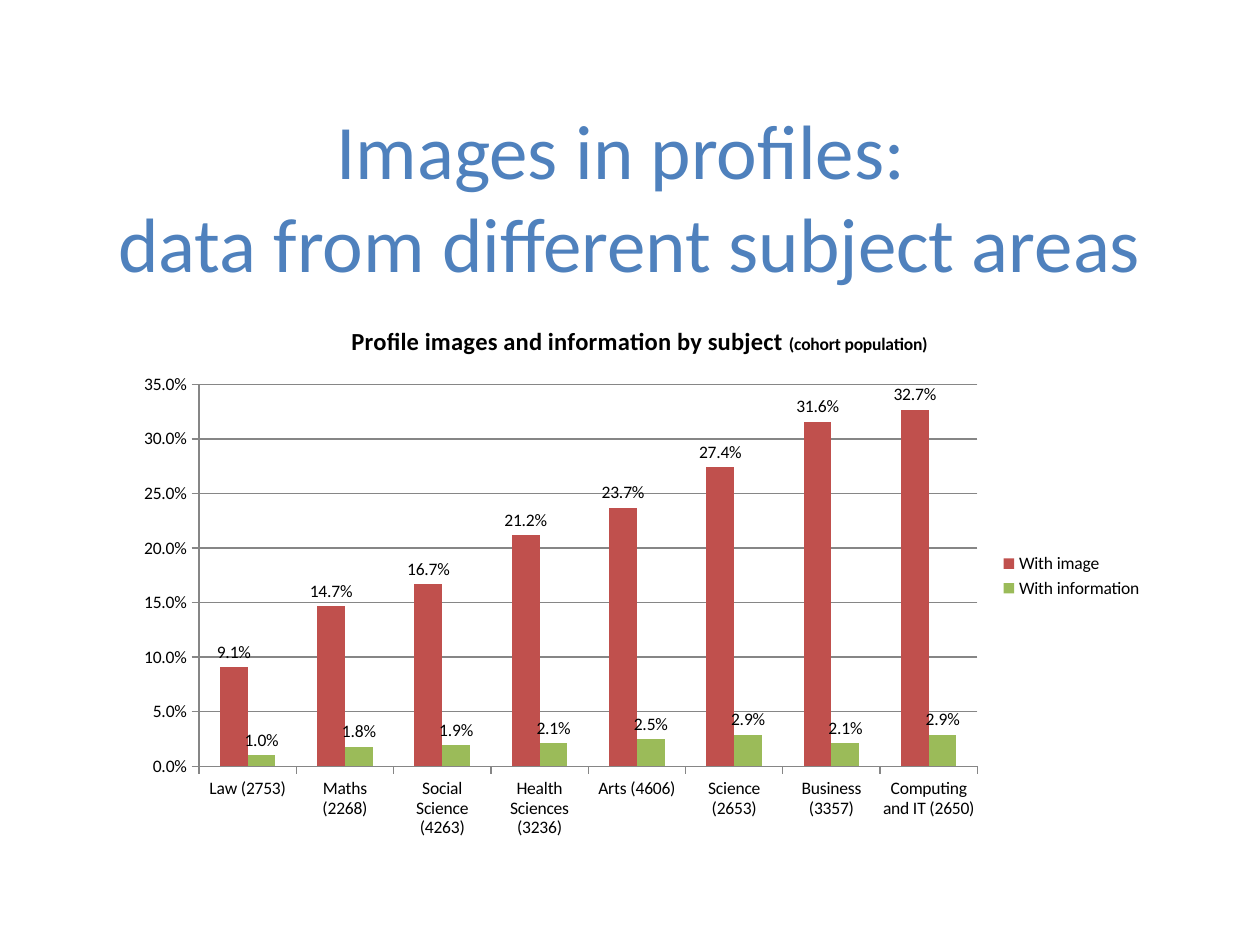
"""Build a slide that charts profile images and information by subject area."""
from pptx import Presentation
from pptx.chart.data import CategoryChartData
from pptx.dml.color import RGBColor
from pptx.enum.chart import XL_CHART_TYPE as ChartType
from pptx.enum.chart import XL_LABEL_POSITION as LabelPosition
from pptx.enum.chart import XL_LEGEND_POSITION as LegendPosition
from pptx.enum.chart import XL_TICK_MARK as TickMark
from pptx.enum.text import MSO_ANCHOR as Anchor
from pptx.enum.text import PP_ALIGN as Align
from pptx.util import Inches, Pt

HEADING = ["Images in profiles:", " data from different subject areas"]
CHART_TITLE = "Profile images and information by subject "
CHART_TITLE_NOTE = "(cohort population)"
SUBJECTS = [
    ("Law (2753)", 0.091, 0.01),
    ("Maths (2268)", 0.147, 0.018),
    ("Social Science (4263)", 0.167, 0.019),
    ("Health Sciences (3236)", 0.212, 0.021),
    ("Arts (4606)", 0.237, 0.025),
    ("Science (2653)", 0.274, 0.029),
    ("Business (3357)", 0.316, 0.021),
    ("Computing and IT (2650)", 0.327, 0.029),
]
SERIES = ["With image", "With information"]
PERCENT = "0.0%"

THEME = {
    "font": "Calibri",
    "heading": "4F81BD",
    "text": "000000",
    "line": "868686",
    "series": ["C0504D", "9BBB59"],
    "heading_size": 44,
    "title_size": 14,
    "body_size": 10,
}
WIDTH, HEIGHT = Inches(10), Inches(7.5)
HEADING_AREA = (0.043, 0.123, 0.9, 0.167)
CHART_AREA = (0.098, 0.321, 0.819, 0.577)


def place(area):
    left, top, width, height = area
    return (int(left * WIDTH), int(top * HEIGHT),
            int(width * WIDTH), int(height * HEIGHT))


def set_font(font, size, color, bold=False):
    font.name = THEME["font"]
    font.size = Pt(size)
    font.bold = bold
    font.color.rgb = RGBColor.from_string(color)


def write_text(paragraph, text, **font_format):
    run = paragraph.add_run()
    run.text = text
    set_font(run.font, **font_format)


def add_heading(slide):
    frame = slide.shapes.add_textbox(*place(HEADING_AREA)).text_frame
    frame.word_wrap = True
    frame.vertical_anchor = Anchor.MIDDLE
    paragraph = frame.paragraphs[0]
    paragraph.alignment = Align.CENTER
    for index, line in enumerate(HEADING):
        if index:
            paragraph.add_line_break()
        write_text(paragraph, line, size=THEME["heading_size"], color=THEME["heading"])


def style_line(line):
    line.color.rgb = RGBColor.from_string(THEME["line"])
    line.width = Pt(0.75)


def add_subject_chart(slide):
    names, *columns = zip(*SUBJECTS)
    data = CategoryChartData(number_format=PERCENT)
    data.categories = names
    for name, values in zip(SERIES, columns):
        data.add_series(name, values)
    chart = slide.shapes.add_chart(
        ChartType.COLUMN_CLUSTERED, *place(CHART_AREA), data).chart
    set_font(chart.font, THEME["body_size"], THEME["text"])

    title = chart.chart_title.text_frame.paragraphs[0]
    for text, size in [(CHART_TITLE, "title_size"), (CHART_TITLE_NOTE, "body_size")]:
        write_text(title, text, size=THEME[size], color=THEME["text"], bold=True)
    chart.chart_title.include_in_layout = False

    chart.has_legend = True
    chart.legend.position = LegendPosition.RIGHT
    chart.legend.include_in_layout = False

    for axis in (chart.category_axis, chart.value_axis):
        axis.major_tick_mark = TickMark.OUTSIDE
        axis.minor_tick_mark = TickMark.NONE
        style_line(axis.format.line)
    value_axis = chart.value_axis
    value_axis.minimum_scale, value_axis.maximum_scale = 0, 0.35
    value_axis.major_unit = 0.05
    value_axis.tick_labels.number_format = PERCENT
    value_axis.tick_labels.number_format_is_linked = False
    style_line(value_axis.major_gridlines.format.line)

    plot = chart.plots[0]
    plot.vary_by_categories = False
    plot.gap_width, plot.overlap = 150, 0
    for series, color in zip(plot.series, THEME["series"]):
        series.format.fill.solid()
        series.format.fill.fore_color.rgb = RGBColor.from_string(color)
        labels = series.data_labels
        labels.show_value = True
        labels.number_format = PERCENT
        labels.number_format_is_linked = False
        labels.position = LabelPosition.OUTSIDE_END


def main():
    presentation = Presentation()
    presentation.slide_width, presentation.slide_height = WIDTH, HEIGHT
    slide = presentation.slides.add_slide(presentation.slide_layouts[6])
    add_heading(slide)
    add_subject_chart(slide)
    presentation.save("out.pptx")


if __name__ == "__main__":
    main()
